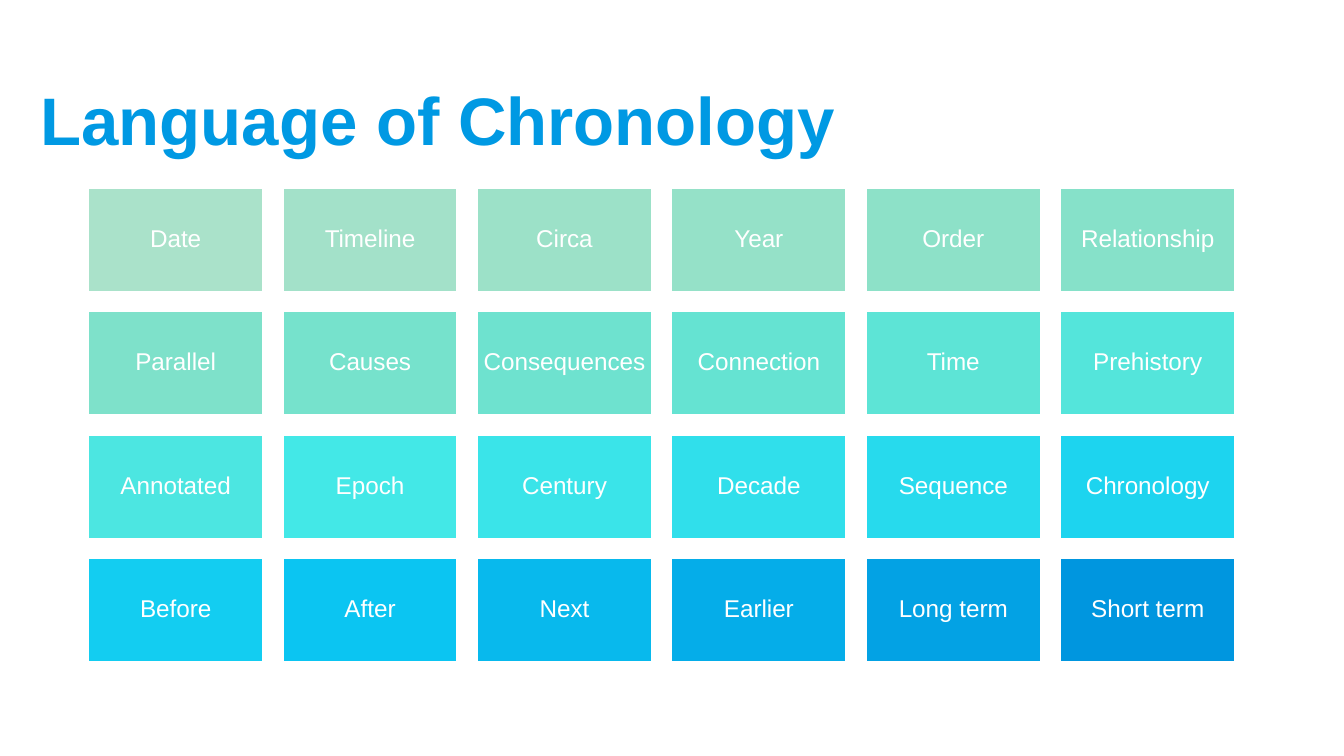
import colorsys
from dataclasses import dataclass

import pptx
import pptx.dml.color
import pptx.enum.shapes
import pptx.enum.text
import pptx.util
from pptx.util import Cm


@dataclass(frozen=True)
class Theme:
    font: str = "Arial"
    title_color: str = "0099E3"
    first_tile: str = "AAE2CA"
    last_tile: str = "0096DF"
    white: str = "FFFFFF"
    title_size: int = 36
    tile_size: int = 13
    border: int = 2


THEME = Theme()
TERMS = [
    ["Date", "Timeline", "Circa", "Year", "Order", "Relationship"],
    ["Parallel", "Causes", "Consequences", "Connection", "Time", "Prehistory"],
    ["Annotated", "Epoch", "Century", "Decade", "Sequence", "Chronology"],
    ["Before", "After", "Next", "Earlier", "Long term", "Short term"],
]
GRID_LEFT, GRID_TOP = 1.65, 3.53
TILE_WIDTH, TILE_HEIGHT = 3.34, 2.0
GAP = TILE_WIDTH / 10


def rgb(value):
    return pptx.dml.color.RGBColor.from_string(value)


def to_hls(color):
    return colorsys.rgb_to_hls(*(channel / 255 for channel in rgb(color)))


def tile_color(share):
    """Blend from the first tile colour to the last through hue, lightness and saturation."""
    ends = zip(to_hls(THEME.first_tile), to_hls(THEME.last_tile))
    blended = [start + (end - start) * share for start, end in ends]
    channels = colorsys.hls_to_rgb(*blended)
    return pptx.dml.color.RGBColor(*(round(channel * 255) for channel in channels))


def write_text(box, text, size, color, alignment, bold=False):
    frame = box.text_frame
    frame.word_wrap = True
    frame.auto_size = pptx.enum.text.MSO_AUTO_SIZE.NONE
    frame.vertical_anchor = pptx.enum.text.MSO_ANCHOR.MIDDLE
    para = frame.paragraphs[0]
    para.text = text
    para.alignment = alignment
    para.line_spacing = 0.9
    para.font.name = THEME.font
    para.font.size = pptx.util.Pt(size)
    para.font.bold = bold
    para.font.color.rgb = rgb(color)


def set_title(page, text):
    box = page.shapes.title
    box.left, box.top, box.width, box.height = Cm(0.51), Cm(1.14), Cm(24.21), Cm(2.39)
    write_text(box, text, THEME.title_size, THEME.title_color,
               pptx.enum.text.PP_ALIGN.LEFT, bold=True)


def add_tile(page, term, left, top, color):
    box = page.shapes.add_shape(pptx.enum.shapes.MSO_SHAPE.RECTANGLE,
                                Cm(left), Cm(top), Cm(TILE_WIDTH), Cm(TILE_HEIGHT))
    box.shadow.inherit = False
    box.fill.solid()
    box.fill.fore_color.rgb = color
    box.line.color.rgb = rgb(THEME.white)
    box.line.width = pptx.util.Pt(THEME.border)
    frame = box.text_frame
    frame.margin_left = frame.margin_right = Cm(0.13)
    frame.margin_top = frame.margin_bottom = Cm(0.13)
    write_text(box, term, THEME.tile_size, THEME.white, pptx.enum.text.PP_ALIGN.CENTER)


def add_term_grid(page, rows):
    columns = len(rows[0])
    last = len(rows) * columns - 1
    for row, terms in enumerate(rows):
        for column, term in enumerate(terms):
            left = GRID_LEFT + column * (TILE_WIDTH + GAP)
            top = GRID_TOP + row * (TILE_HEIGHT + GAP)
            add_tile(page, term, left, top, tile_color((row * columns + column) / last))


def main():
    """Build the slide of chronology terms and save it."""
    deck = pptx.Presentation()
    deck.slide_width, deck.slide_height = Cm(25.4), Cm(14.29)
    page = deck.slides.add_slide(deck.slide_layouts.get_by_name("Title Only"))
    set_title(page, "Language of Chronology")
    add_term_grid(page, TERMS)
    deck.save("out.pptx")


if __name__ == "__main__":
    main()
